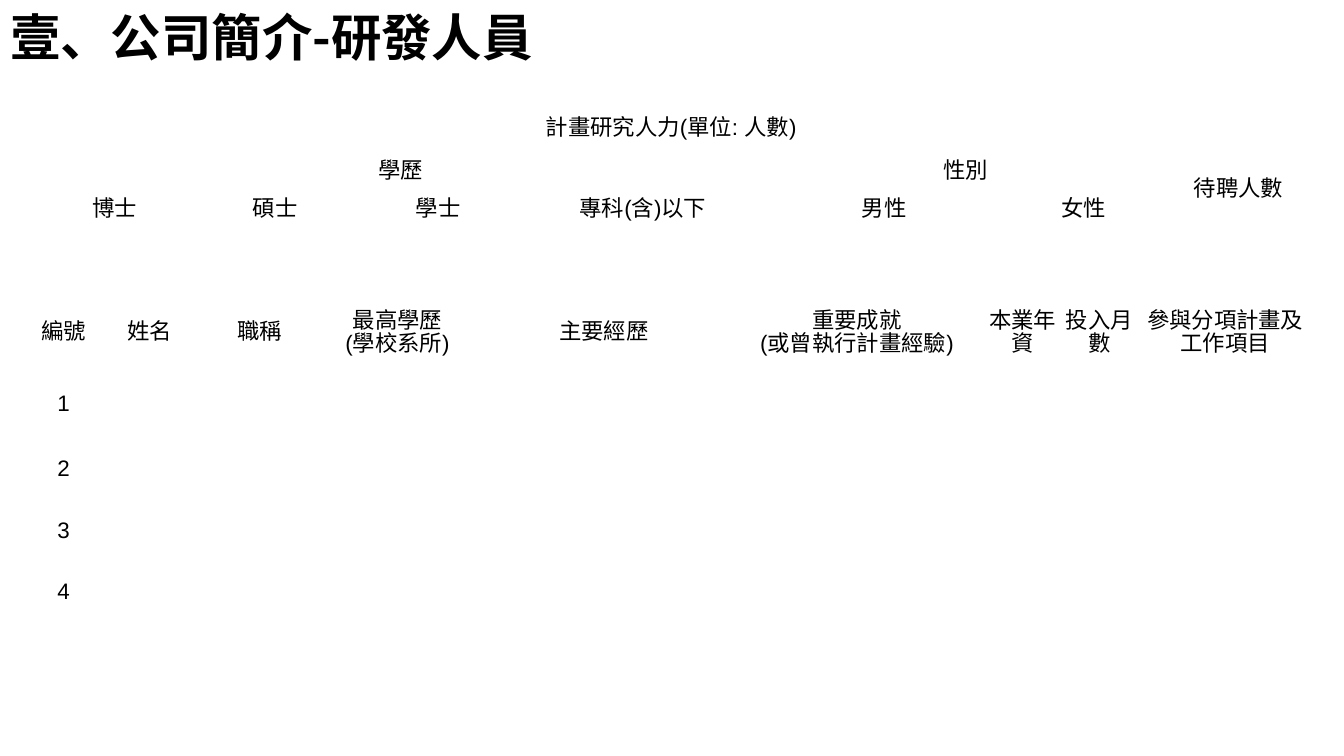
from dataclasses import dataclass

from lxml.etree import SubElement
from pptx import Presentation
from pptx.dml.color import RGBColor
from pptx.enum.text import MSO_ANCHOR as Anchor, MSO_AUTO_SIZE as AutoSize, PP_ALIGN as Align
from pptx.oxml.ns import qn
from pptx.slide import Slide
from pptx.table import _Cell as Cell
from pptx.text.text import _Paragraph as Paragraph
from pptx.util import Pt

BLACK = "000000"
CJK_FONT = "Noto Sans CJK SC"
TABLE_LEFT = 21.6


@dataclass
class Entry:
    """Text of a table cell, with one paragraph per line, and its span."""
    row: int
    column: int
    text: str
    rows: int = 1
    columns: int = 1


@dataclass
class Grid:
    top: float
    widths: list[float]
    heights: list[float]
    entries: list[Entry]


def color(value: str) -> RGBColor:
    return RGBColor.from_string(value)


def add_span(para: Paragraph, text: str, size: float, font: str, bold: bool = False) -> None:
    span = para.add_run()
    span.text = text
    span.font.size = Pt(size)
    span.font.bold = bold
    span.font.name = font
    span.font.color.rgb = color(BLACK)
    # East Asian characters take their own typeface
    SubElement(span.font._element, qn("a:ea"), typeface=CJK_FONT)


def write_cell(cell: Cell, text: str) -> None:
    frame = cell.text_frame
    for index, line in enumerate(text.split("\n")):
        para = frame.add_paragraph() if index else frame.paragraphs[0]
        para.alignment = Align.CENTER
        para.line_spacing = Pt(16)
        add_span(para, line, 16, "Arial")


def add_grid(page: Slide, grid: Grid) -> None:
    frame = page.shapes.add_table(
        len(grid.heights), len(grid.widths), Pt(TABLE_LEFT), Pt(grid.top),
        Pt(sum(grid.widths)), Pt(sum(grid.heights)))
    table = frame.table
    table.first_row = table.horz_banding = False
    for column, width in zip(table.columns, grid.widths):
        column.width = Pt(width)
    for row, height in zip(table.rows, grid.heights):
        row.height = Pt(height)
    for cell in table.iter_cells():
        cell.fill.background()
        cell.vertical_anchor = Anchor.MIDDLE
        cell.margin_left = cell.margin_right = Pt(1.4)
        cell.margin_top = cell.margin_bottom = Pt(0)
    for entry in grid.entries:
        cell = table.cell(entry.row, entry.column)
        if entry.rows > 1 or entry.columns > 1:
            cell.merge(table.cell(entry.row + entry.rows - 1,
                                  entry.column + entry.columns - 1))
        write_cell(cell, entry.text)


def add_title(page: Slide, text: str) -> None:
    title = page.shapes.title
    title.left, title.top, title.width, title.height = Pt(0), Pt(0), Pt(828), Pt(57.6)
    frame = title.text_frame
    frame.auto_size = AutoSize.NONE
    frame.word_wrap = True
    frame.vertical_anchor = Anchor.MIDDLE
    frame.margin_left = frame.margin_right = Pt(7.2)
    frame.margin_top = frame.margin_bottom = Pt(3.6)
    para = frame.paragraphs[0]
    para.alignment = Align.LEFT
    para.line_spacing = 0.9
    add_span(para, text, 36, CJK_FONT, bold=True)


# Researchers: one heading row, then numbered rows
STAFF_HEADINGS = ["編號", "姓名", "職稱", "最高學歷\n(學校系所)", "主要經歷",
                  "重要成就\n(或曾執行計畫經驗)", "本業年資", "投入月數",
                  "參與分項計畫及工作項目"]
STAFF = Grid(
    top=213.8,
    widths=[47.5, 75.6, 82, 114.5, 180.7, 180.7, 56.2, 53.3, 126.5],
    heights=[51.1, 49, 43.9, 43.9, 43.9],
    entries=[Entry(0, column, text) for column, text in enumerate(STAFF_HEADINGS)]
    + [Entry(number, 0, str(number)) for number in range(1, 5)])

# Headcount: grouped headings over a blank row
HEADCOUNT_HEADINGS = [" 博士", "碩士", "學士", "專科(含)以下", "男性", "女性"]
HEADCOUNT = Grid(
    top=77,
    widths=[116.6, 116.6, 116.6, 175.7, 169.2, 115.9, 105.1],
    heights=[33.1, 28.1, 25.9, 28.1],
    entries=[Entry(0, 0, "計畫研究人力(單位: 人數)", columns=7),
             Entry(1, 0, " 學歷", columns=4),
             Entry(1, 4, "性別", columns=2),
             Entry(1, 6, "待聘人數", rows=2)]
    + [Entry(2, column, text) for column, text in enumerate(HEADCOUNT_HEADINGS)])


def main() -> None:
    deck = Presentation()
    deck.slide_width, deck.slide_height = Pt(960), Pt(540)
    page = deck.slides.add_slide(deck.slide_layouts.get_by_name("Title Only"))
    add_title(page, "壹、公司簡介-研發人員")
    for grid in (STAFF, HEADCOUNT):
        add_grid(page, grid)
    deck.save("out.pptx")


if __name__ == "__main__":
    main()
